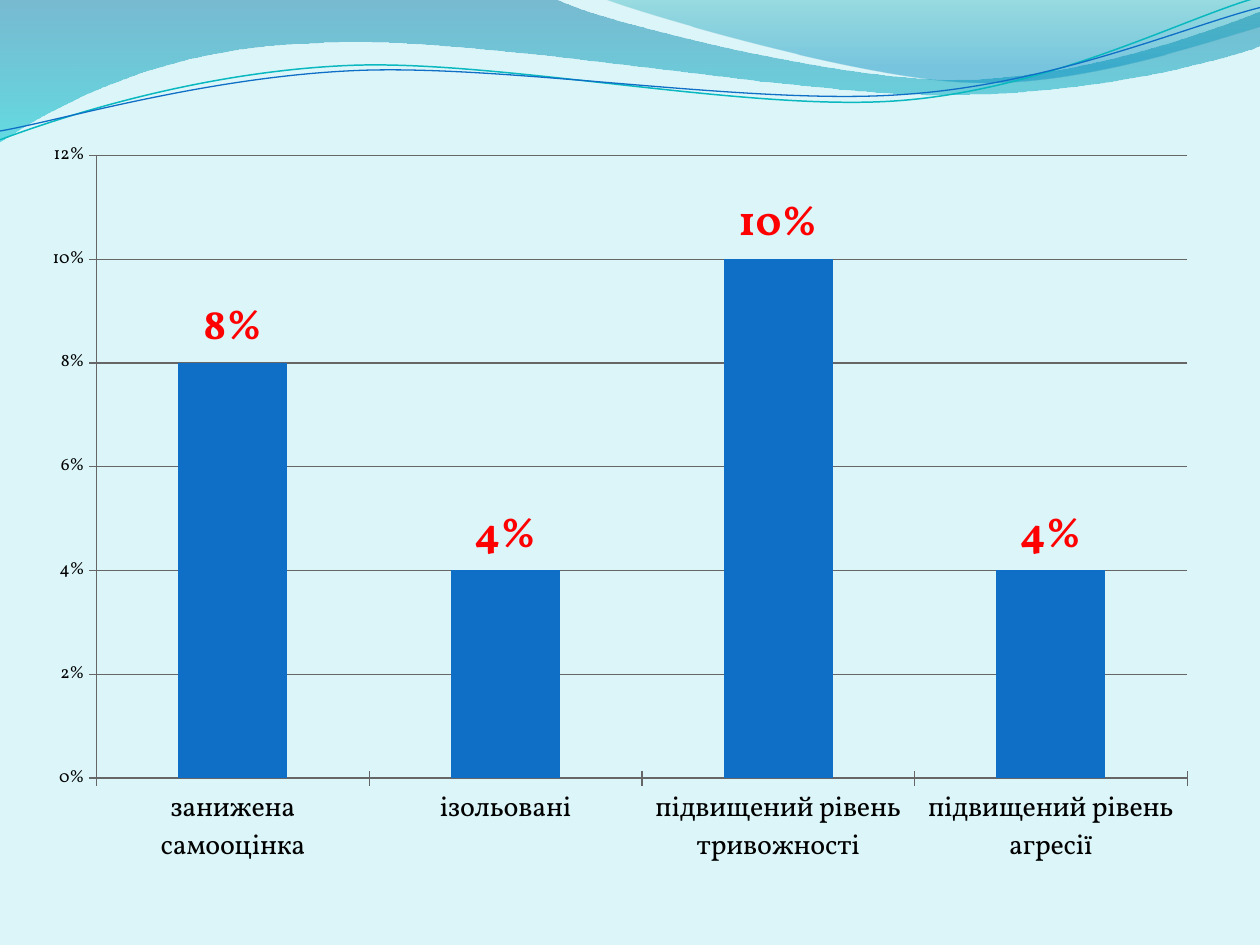
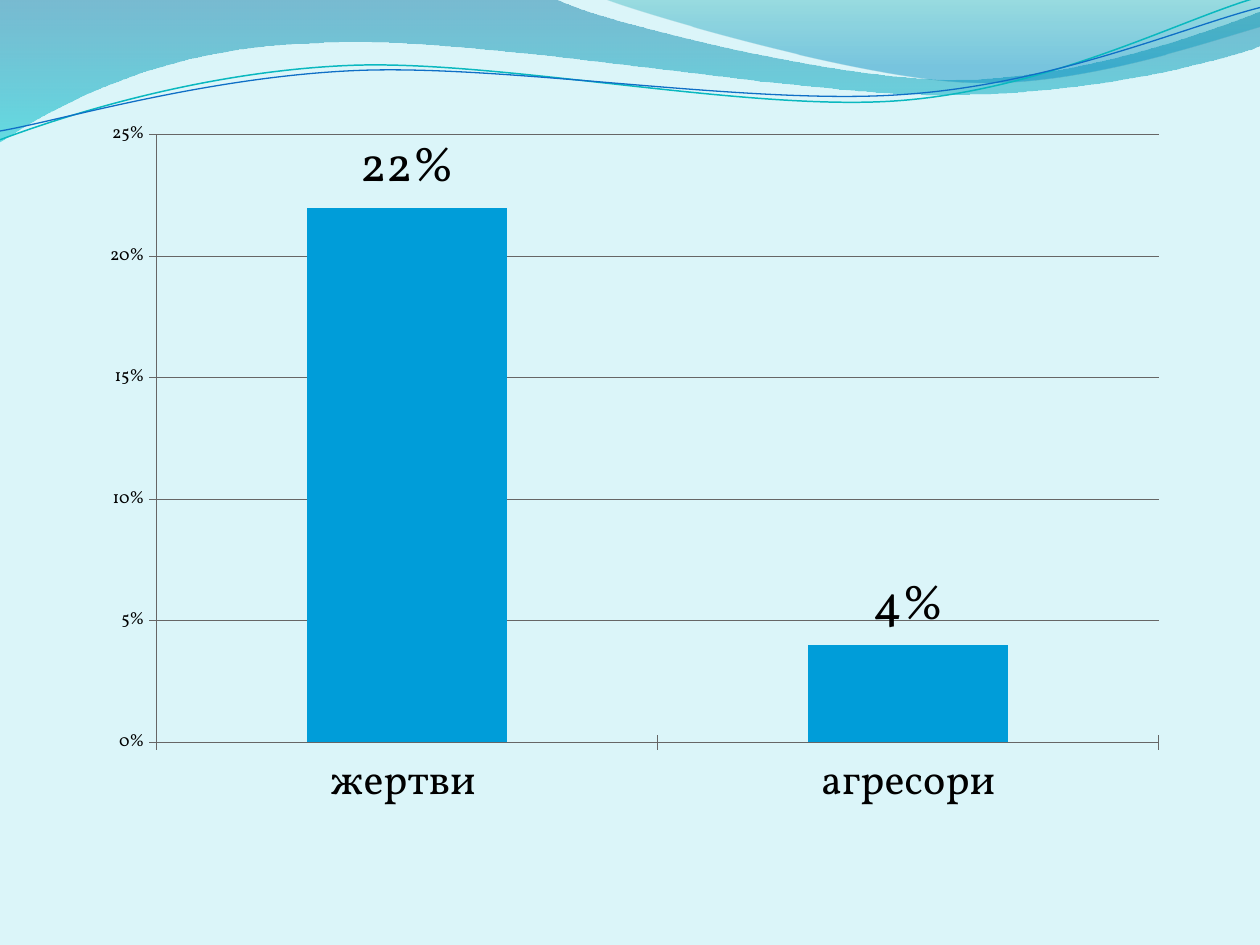
from dataclasses import dataclass

from lxml import etree
from pptx import Presentation
from pptx.chart.data import CategoryChartData
from pptx.dml.color import RGBColor
from pptx.enum.chart import XL_CHART_TYPE as ChartType
from pptx.enum.chart import XL_LABEL_POSITION as LabelPosition
from pptx.enum.chart import XL_TICK_MARK as TickMark
from pptx.oxml.ns import qn
from pptx.util import Inches, Pt


@dataclass(frozen=True)
class Theme:
    font: str = "Vollkorn"
    background: str = "DBF5F9"
    text: str = "000000"
    accent: str = "FF0000"
    axis: str = "666666"
    blue: str = "0F6FC6"
    sky: str = "009DD9"
    teal: str = "0AB8BF"
    tick_size: int = 10
    axis_width: float = 0.75


THEME = Theme()
WIDTH, HEIGHT = Inches(10), Inches(7.5)

# Each wave starts at a point; 2 numbers add a line, 6 a Bézier curve (inches)
BROAD_WAVE = [
    (0, 0), (4.4, -0.01),
    (4.76, 0.17, 6.64, 0.63, 7.58, 0.63), (8.53, 0.63, 9.58, 0.26, 10, 0.09),
    (10.01, 0.36),
    (9.83, 0.44, 8.7, 0.76, 7.46, 0.75), (6.22, 0.75, 3.82, 0.28, 2.57, 0.34),
    (1.29, 0.36, 0.46, 0.83, -0.01, 1.13), (0, 0),
]
RIGHT_WAVE = [
    (4.79, -0.01),
    (5.09, 0.11, 6.82, 0.62, 7.69, 0.65), (8.56, 0.69, 9.61, 0.32, 10, 0.21),
    (10, 0), (4.79, -0.01),
]
TEAL_LINE = [
    (0, 1.11),
    (0.48, 0.93, 1.58, 0.57, 2.77, 0.52), (3.95, 0.47, 5.93, 0.89, 7.13, 0.8),
    (8.33, 0.71, 9.38, 0.15, 9.98, -0.02),
]
BLUE_LINE = [
    (0, 1.04),
    (0.47, 0.96, 1.64, 0.61, 2.83, 0.56), (4.03, 0.51, 5.97, 0.84, 7.17, 0.75),
    (8.36, 0.67, 9.41, 0.21, 10, 0.06),
]


def color(value):
    return RGBColor.from_string(value)


def format_text(font, size=THEME.tick_size, fill=THEME.text, bold=False):
    font.name = THEME.font
    font.size = Pt(size)
    font.bold = bold
    font.color.rgb = color(fill)


def format_line(line, fill, width):
    line.color.rgb = color(fill)
    line.width = Pt(width)


# Waves
def bend(shape, segments):
    """Turn the straight steps of a freeform into the curves of its segments."""
    steps = list(shape.element.spPr.iter(qn("a:lnTo")))
    for step, segment in zip(steps, segments[1:]):
        if len(segment) == 2:
            continue
        curve = etree.Element(qn("a:cubicBezTo"))
        for x, y in zip(segment[::2], segment[1::2]):
            etree.SubElement(curve, qn("a:pt"), x=str(Inches(x) - shape.left),
                             y=str(Inches(y) - shape.top))
        step.getparent().replace(step, curve)


def add_wave(slide, segments, closed):
    points = [(Inches(segment[-2]), Inches(segment[-1])) for segment in segments]
    builder = slide.shapes.build_freeform(*points[0])
    builder.add_line_segments(points[1:], close=closed)
    shape = builder.convert_to_shape()
    bend(shape, segments)
    shape.shadow.inherit = False
    return shape


def add_filled_wave(slide, segments, stops):
    shape = add_wave(slide, segments, closed=True)
    shape.line.fill.background()
    shape.fill.gradient()
    shape.fill.gradient_angle = 270
    for stop, (position, fill, opacity) in zip(shape.fill.gradient_stops, stops):
        stop.position = position
        stop.color.rgb = color(fill)
    tones = shape.element.spPr.iter(qn("a:srgbClr"))
    for tone, (position, fill, opacity) in zip(tones, stops):
        etree.SubElement(tone, qn("a:alpha"), val=str(opacity * 1000))
    return shape


def add_line_wave(slide, segments, fill, width):
    shape = add_wave(slide, segments, closed=False)
    shape.fill.background()
    format_line(shape.line, fill, width)
    return shape


def decorate_master(presentation, slide):
    """Draw the waves on a slide, then hand them to the master for all slides."""
    master = presentation.slide_master
    master.background.fill.solid()
    master.background.fill.fore_color.rgb = color(THEME.background)
    waves = [
        add_filled_wave(slide, BROAD_WAVE, [(0, "0074A1", 45), (1, "00C6CF", 55)]),
        add_filled_wave(slide, RIGHT_WAVE, [(0, "00A1A9", 30), (0.8, "008BBF", 45)]),
        add_line_wave(slide, TEAL_LINE, THEME.teal, 0.85),
        add_line_wave(slide, BLUE_LINE, THEME.blue, 0.75),
    ]
    for wave in waves:
        master.element.cSld.spTree.append(wave.element)


# Column chart
def format_axis(axis, size):
    axis.major_tick_mark = TickMark.CROSS
    axis.minor_tick_mark = TickMark.NONE
    format_text(axis.tick_labels.font, size=size)
    format_line(axis.format.line, THEME.axis, THEME.axis_width)


def add_percent_chart(slide, box, shares, fill, top, unit, category_size, label_format):
    """Place a column chart in a box given as shares of the slide."""
    left, upper, width, height = box
    data = CategoryChartData(number_format="0%")
    data.categories = list(shares)
    data.add_series("Series 1", list(shares.values()))
    chart = slide.shapes.add_chart(
        ChartType.COLUMN_CLUSTERED, int(left * WIDTH), int(upper * HEIGHT),
        int(width * WIDTH), int(height * HEIGHT), data).chart
    chart.has_title = False
    chart.has_legend = False
    format_text(chart.font)

    format_axis(chart.category_axis, category_size)
    values = chart.value_axis
    format_axis(values, THEME.tick_size)
    values.minimum_scale, values.maximum_scale, values.major_unit = 0, top, unit
    values.tick_labels.number_format = "0%"
    values.tick_labels.number_format_is_linked = False
    values.has_major_gridlines = True
    format_line(values.major_gridlines.format.line, THEME.axis, THEME.axis_width)

    plot = chart.plots[0]
    plot.gap_width = 150
    plot.vary_by_categories = False
    column = plot.series[0].format
    column.fill.solid()
    column.fill.fore_color.rgb = color(fill)
    column.line.fill.background()

    labels = plot.series[0].data_labels
    labels.show_value = True
    labels.number_format = "0%"
    labels.number_format_is_linked = False
    labels.position = LabelPosition.OUTSIDE_END
    format_text(labels.font, **label_format)


def main():
    presentation = Presentation()
    presentation.slide_width, presentation.slide_height = WIDTH, HEIGHT
    blank = presentation.slide_layouts.get_by_name("Blank")
    risk_slide, role_slide = [presentation.slides.add_slide(blank) for _ in range(2)]
    decorate_master(presentation, risk_slide)

    # Risk factors
    add_percent_chart(
        risk_slide, (0.023, 0.136, 0.938, 0.797),
        {"занижена самооцінка": 0.08, "ізольовані": 0.04,
         "підвищений рівень тривожності": 0.1, "підвищений рівень агресії": 0.04},
        THEME.blue, top=0.12, unit=0.02, category_size=16,
        label_format=dict(size=24, fill=THEME.accent, bold=True))

    # Victims and aggressors
    add_percent_chart(
        role_slide, (0.07, 0.115, 0.867, 0.76),
        {"жертви ": 0.22, "агресори": 0.04},
        THEME.sky, top=0.25, unit=0.05, category_size=24,
        label_format=dict(size=28))

    presentation.save("out.pptx")


if __name__ == "__main__":
    main()
